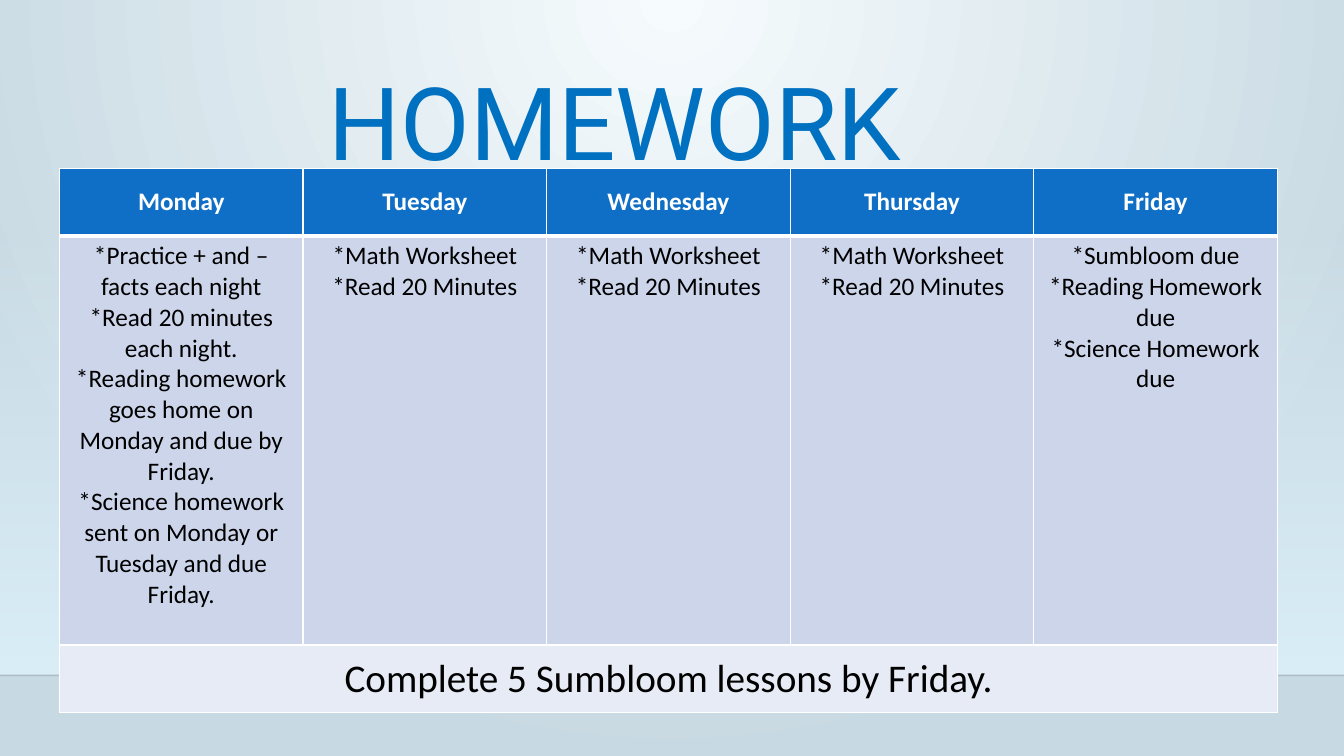
from dataclasses import dataclass

from lxml.etree import SubElement
from pptx import Presentation
from pptx.dml.color import RGBColor
from pptx.enum.shapes import MSO_CONNECTOR, MSO_SHAPE
from pptx.enum.text import MSO_ANCHOR, PP_ALIGN
from pptx.oxml import parse_xml
from pptx.oxml.ns import nsdecls, qn
from pptx.util import Inches, Pt

TITLE = "HOMEWORK"
WORKSHEET_DAY = ["*Math Worksheet", "*Read 20 Minutes"]
WEEK = {
    "Monday": [
        "*Practice + and – facts each night",
        "*Read 20 minutes each night.",
        "*Reading homework goes home on Monday and due by Friday.",
        "*Science homework sent on Monday or Tuesday and due Friday.",
    ],
    "Tuesday": WORKSHEET_DAY,
    "Wednesday": WORKSHEET_DAY,
    "Thursday": WORKSHEET_DAY,
    "Friday": ["*Sumbloom due", "*Reading Homework due", "*Science Homework due"],
}
REMINDER = "Complete 5 Sumbloom lessons by Friday."


@dataclass(frozen=True)
class Theme:
    title_font: str = "Roboto"
    body_font: str = "Calibri"
    title_size: float = 72.2
    body_size: float = 18
    reminder_size: float = 28
    title: str = "0070C0"
    header: str = "0F6FC6"
    tasks: str = "CCD5EA"
    reminder: str = "E7EBF5"
    white: str = "FFFFFF"
    black: str = "000000"
    center: str = "F6FBFD"
    edge: str = "C7D9E2"
    glow: str = "DBEFF9"


THEME = Theme()
WIDTH, HEIGHT = 13.33, 7.5
HORIZON = 6.7
GLOW_TOP = 2.21
TABLE_LEFT, TABLE_TOP, TABLE_WIDTH = 0.59, 1.67, 12.08
ROW_HEIGHTS = (0.67, 4.06, 0.67)


def gradient(stops, direction):
    """Build a gradient fill from (position, colour, opacity) percent stops."""
    stop_xml = "".join(
        f'<a:gs pos="{position * 1000}"><a:srgbClr val="{color}">'
        f'<a:alpha val="{opacity * 1000}"/></a:srgbClr></a:gs>'
        for position, color, opacity in stops
    )
    return parse_xml(
        f'<a:gradFill {nsdecls("a")} rotWithShape="1">'
        f"<a:gsLst>{stop_xml}</a:gsLst>{direction}</a:gradFill>"
    )


def replace_gradient(fill, parent, new_fill):
    fill.gradient()
    parent.replace(parent.find(qn("a:gradFill")), new_fill)


def write(frame, lines, *, size, color, font=THEME.body_font, bold=False,
          align=PP_ALIGN.CENTER, line_spacing=None):
    for index, line in enumerate(lines):
        para = frame.paragraphs[0] if index == 0 else frame.add_paragraph()
        para.alignment = align
        para.line_spacing = line_spacing
        span = para.add_run()
        span.text = line
        span.font.name = font
        span.font.size = Pt(size)
        span.font.bold = bold
        span.font.color.rgb = RGBColor.from_string(color)


def add_borders(cell, **widths):
    """Draw white borders; the fill must be set afterwards."""
    properties = cell._tc.get_or_add_tcPr()
    for side in "LRTB":
        line = SubElement(properties, qn(f"a:ln{side}"),
                          w=str(Pt(widths.get(side, 1))))
        fill = SubElement(line, qn("a:solidFill"))
        SubElement(fill, qn("a:srgbClr"), val=THEME.white)


def fill_cell(cell, lines, fill, *, anchor=MSO_ANCHOR.MIDDLE, **text_format):
    cell.vertical_anchor = anchor
    cell.fill.solid()
    cell.fill.fore_color.rgb = RGBColor.from_string(fill)
    write(cell.text_frame, lines, **text_format)


def add_backdrop(page):
    background = page.background.fill
    background.gradient()
    properties = page._element.cSld.bg.bgPr
    replace_gradient(background, properties, gradient(
        [(0, THEME.center, 100), (100, THEME.edge, 100)],
        '<a:path path="circle">'
        '<a:fillToRect l="43000" t="0" r="43000" b="100000"/></a:path>'))

    glow = page.shapes.add_shape(
        MSO_SHAPE.RECTANGLE, 0, Inches(GLOW_TOP),
        Inches(WIDTH), Inches(HORIZON - GLOW_TOP))
    glow.shadow.inherit = False
    glow.line.fill.background()
    replace_gradient(glow.fill, glow._element.spPr, gradient(
        [(0, THEME.glow, 0), (100, THEME.glow, 100)],
        '<a:lin ang="5400000" scaled="0"/>'))

    horizon = page.shapes.add_connector(
        MSO_CONNECTOR.STRAIGHT, 0, Inches(HORIZON), Inches(WIDTH), Inches(HORIZON))
    horizon.line.width = Pt(1)
    horizon.line.color.rgb = RGBColor.from_string(THEME.black)
    color = horizon._element.spPr.find(".//" + qn("a:srgbClr"))
    SubElement(color, qn("a:alpha"), val="20000")
    SubElement(horizon._element.spPr, qn("a:effectLst"))


def add_title(page):
    title = page.shapes.title
    title.left, title.top = Inches(3.16), Inches(0.42)
    title.width, title.height = Inches(8.29), Inches(1.42)
    title.text_frame.vertical_anchor = MSO_ANCHOR.TOP
    write(title.text_frame, [TITLE], size=THEME.title_size, color=THEME.title,
          font=THEME.title_font, align=PP_ALIGN.LEFT, line_spacing=1.1)


def add_week_table(page):
    table = page.shapes.add_table(
        len(ROW_HEIGHTS), len(WEEK), Inches(TABLE_LEFT), Inches(TABLE_TOP),
        Inches(TABLE_WIDTH), Inches(sum(ROW_HEIGHTS))).table
    for row, height in zip(table.rows, ROW_HEIGHTS):
        row.height = Inches(height)
    for column in table.columns:
        column.width = Inches(TABLE_WIDTH / len(WEEK))
    for index, cell in enumerate(table.iter_cells()):
        row = index // len(WEEK)
        add_borders(cell, B=3 if row == 0 else 1, T=3 if row == 1 else 1)

    for column, (day, tasks) in enumerate(WEEK.items()):
        fill_cell(table.cell(0, column), [day], THEME.header,
                  size=THEME.body_size, color=THEME.white, bold=True)
        fill_cell(table.cell(1, column), tasks, THEME.tasks, anchor=MSO_ANCHOR.TOP,
                  size=THEME.body_size, color=THEME.black)
    reminder = table.cell(2, 0)
    reminder.merge(table.cell(2, len(WEEK) - 1))
    fill_cell(reminder, [REMINDER], THEME.reminder,
              size=THEME.reminder_size, color=THEME.black)


def main():
    deck = Presentation()
    deck.slide_width, deck.slide_height = Inches(WIDTH), Inches(HEIGHT)
    page = deck.slides.add_slide(deck.slide_layouts.get_by_name("Title Only"))
    add_backdrop(page)
    add_title(page)
    add_week_table(page)
    deck.save("out.pptx")


if __name__ == "__main__":
    main()
